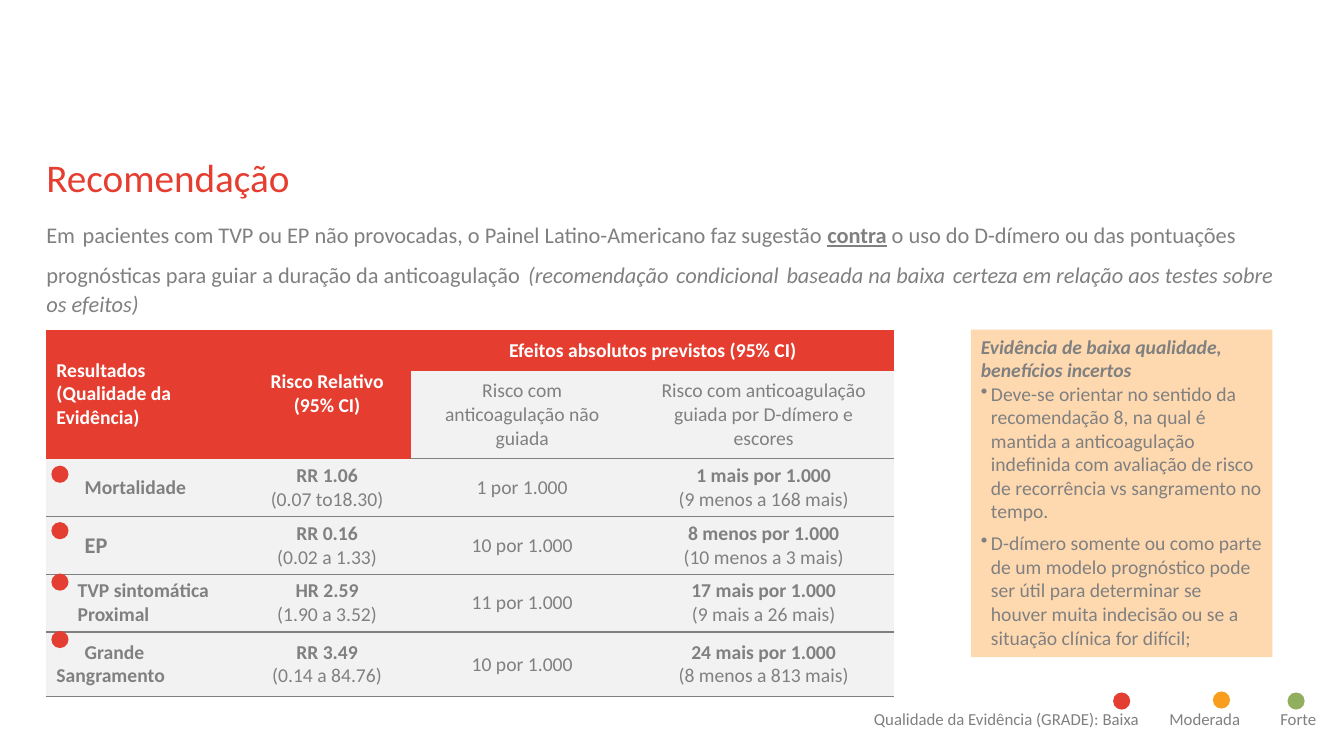
from lxml import etree
from pptx import Presentation
from pptx.dml.color import RGBColor
from pptx.enum.shapes import MSO_SHAPE
from pptx.enum.text import MSO_ANCHOR, PP_ALIGN
from pptx.oxml.ns import qn
from pptx.util import Inches, Pt

OVAL, RECT = MSO_SHAPE.OVAL, MSO_SHAPE.RECTANGLE
TOP, MIDDLE = MSO_ANCHOR.TOP, MSO_ANCHOR.MIDDLE
LEFT, CENTER = PP_ALIGN.LEFT, PP_ALIGN.CENTER
FONT = "Calibri"
PLAIN = "{2D5ABB26-0587-4C30-8999-92F81FD0307C}"
HEX = {"red": "E53E31", "dot": "E43E32", "amber": "F99D1C", "green": "91AF5F",
       "gray": "808080", "pale": "F2F2F2", "peach": "FED9B0", "white": "FFFFFF"}

TITLE = "Recomendação"
ADVICE = [
    ("Em", 16, ""), (" ", 24, ""),
    ("pacientes com TVP ou EP não provocadas, o Painel Latino-Americano faz sugestão ", 16, ""),
    ("contra", 16, "bu"),
    (" o uso do D-dímero ou das pontuações prognósticas para guiar a duração da anticoagulação", 16, ""),
    (" ", 24, ""), ("(recomendação", 16, "i"), (" ", 24, ""),
    ("condicional", 16, "i"), (" ", 24, ""), ("baseada na baixa", 16, "i"), (" ", 24, ""),
    ("certeza em relação aos testes sobre os efeitos)", 16, "i"),
]
HEADS = [
    (0, 0, 1, 0, ["Resultados", "(Qualidade da Evidência)"]),
    (0, 1, 1, 1, ["Risco Relativo", "(95% CI)"]),
    (0, 2, 0, 3, ["Efeitos absolutos previstos (95% CI)"]),
]
SUBS = ["Risco com anticoagulação não guiada",
        "Risco com anticoagulação guiada por D-dímero e escores"]
ROWS = [
    (["Mortalidade"], 14, 0, 0.28, ["RR 1.06", "(0.07 to18.30)"],
     "1 por 1.000", ["1 mais por 1.000", "(9 menos a 168 mais)"]),
    (["EP"], 16, 0, 0.28, ["RR 0.16", "(0.02 a 1.33)"],
     "10 por 1.000", ["8 menos por 1.000", "(10 menos a 3 mais)"]),
    (["TVP sintomática", "Proximal"], 14, 0.21, 0, ["HR 2.59", "(1.90 a 3.52)"],
     "11 por 1.000", ["17 mais por 1.000", "(9 mais a 26 mais)"]),
    (["Grande Sangramento"], 14, 0, 0.28, ["RR 3.49", "(0.14 a 84.76)"],
     "10 por 1.000", ["24 mais por 1.000", "(8 menos a 813 mais)"]),
]
WIDTHS = [1.95, 1.67, 2.2, 2.59]
HEIGHTS = [0.41, 0.87, 0.57, 0.57, 0.57, 0.64]
NOTE = "Evidência de baixa qualidade, benefícios incertos"
POINTS = [
    "Deve-se orientar no sentido da recomendação 8, na qual é mantida a anticoagulação indefinida com avaliação de risco de recorrência vs sangramento no tempo.",
    "D-dímero somente ou como parte de um modelo prognóstico pode ser útil para determinar se houver muita indecisão ou se a situação clínica for difícil;",
]
LEGEND = "Qualidade da Evidência (GRADE): Baixa\tModerada\tForte"
STOPS = [2.93, 4.03]
DOTS = [(0.51, y, "dot") for y in (4.62, 5.18, 5.69, 6.26)]
DOTS += [(11.04, 6.87, "dot"), (12.03, 6.86, "amber"), (12.77, 6.87, "green")]


def rgb(name):
    return RGBColor.from_string(HEX[name])


def add_run(para, text, size=14, style="", color="gray"):
    run = para.add_run()
    run.text = text
    font = run.font
    font.name, font.size = FONT, Pt(size)
    font.bold, font.italic, font.underline = "b" in style, "i" in style, "u" in style
    font.color.rgb = rgb(color)


def indent(para, left, first):
    props = para._p.get_or_add_pPr()
    props.set("marL", str(Inches(left)))
    props.set("indent", str(Inches(first)))
    return props


def add_shape(kind, x, y, w, h, color):
    shape = slide.shapes.add_shape(kind, Inches(x), Inches(y), Inches(w), Inches(h))
    shape.shadow.inherit = False
    shape.fill.solid()
    shape.fill.fore_color.rgb = rgb(color)
    shape.line.fill.background()
    return shape


def place(holder, x, y, w, h, inset):
    holder.left, holder.top, holder.width, holder.height = map(Inches, (x, y, w, h))
    frame = holder.text_frame
    frame.margin_left, frame.margin_top, frame.margin_right, frame.margin_bottom = map(Inches, inset)
    frame.vertical_anchor = TOP
    para = frame.paragraphs[0]
    para.alignment = LEFT
    para.space_before = Pt(0)
    return para


def fill_cell(row, col, lines, styles, size=14, color="gray", back="pale", align=CENTER, rule=True):
    cell = table.cell(row, col)
    cell.vertical_anchor = MIDDLE
    cell.fill.solid()
    cell.fill.fore_color.rgb = rgb(back)
    frame = cell.text_frame
    for n, (text, style) in enumerate(zip(lines, styles)):
        para = frame.add_paragraph() if n else frame.paragraphs[0]
        para.alignment = align
        add_run(para, text, size, style, color)
    if rule:
        edge = etree.Element(qn("a:lnB"), w=str(Pt(1)))
        paint = etree.SubElement(edge, qn("a:solidFill"))
        etree.SubElement(paint, qn("a:srgbClr"), val=HEX["gray"])
        cell._tc.get_or_add_tcPr().insert(0, edge)
    return cell


deck = Presentation()
deck.slide_width, deck.slide_height = Inches(13.33), Inches(7.5)
slide = deck.slides.add_slide(deck.slide_layouts[1])

para = place(slide.shapes.title, 0.46, 1.47, 12, 0.78, (0, 0.05, 0.1, 0.05))
add_run(para, TITLE, 28, "", "red")

para = place(slide.placeholders[1], 0.46, 2.08, 12.17, 1.1, (0, 0, 0, 0))
etree.SubElement(indent(para, 0, 0), qn("a:buNone"))
for text, size, style in ADVICE:
    add_run(para, text, size, style)

frame = slide.shapes.add_table(len(HEIGHTS), len(WIDTHS), Inches(0.46), Inches(3.27),
                               Inches(sum(WIDTHS)), Inches(sum(HEIGHTS)))
table = frame.table
table.first_row = table.horz_banding = False
table._tbl.tblPr.find(qn("a:tableStyleId")).text = PLAIN
for part, width in zip(table.columns, WIDTHS):
    part.width = Inches(width)
for part, height in zip(table.rows, HEIGHTS):
    part.height = Inches(height)

for row, col, last, end, lines in HEADS:
    cell = fill_cell(row, col, lines, "bb", color="white", back="red",
                     align=CENTER if col else LEFT, rule=False)
    cell.merge(table.cell(last, end))
for col, text in enumerate(SUBS, 2):
    fill_cell(1, col, [text], [""])
for row, (names, size, left, first, ratio, risk, effect) in enumerate(ROWS, 2):
    cell = fill_cell(row, 0, names, "bb", size, align=LEFT)
    for para in cell.text_frame.paragraphs:
        indent(para, left, first)
    fill_cell(row, 1, ratio, ["b", ""])
    fill_cell(row, 2, [risk], [""])
    fill_cell(row, 3, effect, ["b", ""])

box = add_shape(RECT, 9.63, 3.27, 2.99, 3.25, "peach").text_frame
box.word_wrap = True
box.vertical_anchor = TOP
para = box.paragraphs[0]
para.alignment = LEFT
add_run(para, NOTE, 14, "bi")
for text in POINTS:
    para = box.add_paragraph()
    para.alignment = LEFT
    para.space_after = Pt(6)
    etree.SubElement(indent(para, 0.1, -0.1), qn("a:buChar"), char="•")
    add_run(para, text)

for x, y, color in DOTS:
    add_shape(OVAL, x, y, 0.17, 0.17, color)

key = slide.shapes.add_textbox(Inches(8.57), Inches(6.98), Inches(4.76), Inches(0.3)).text_frame
key.word_wrap = True
para = key.paragraphs[0]
tabs = etree.SubElement(para._p.get_or_add_pPr(), qn("a:tabLst"))
for stop in STOPS:
    etree.SubElement(tabs, qn("a:tab"), pos=str(Inches(stop)), algn="l")
add_run(para, LEGEND, 12)

deck.save("out.pptx")
